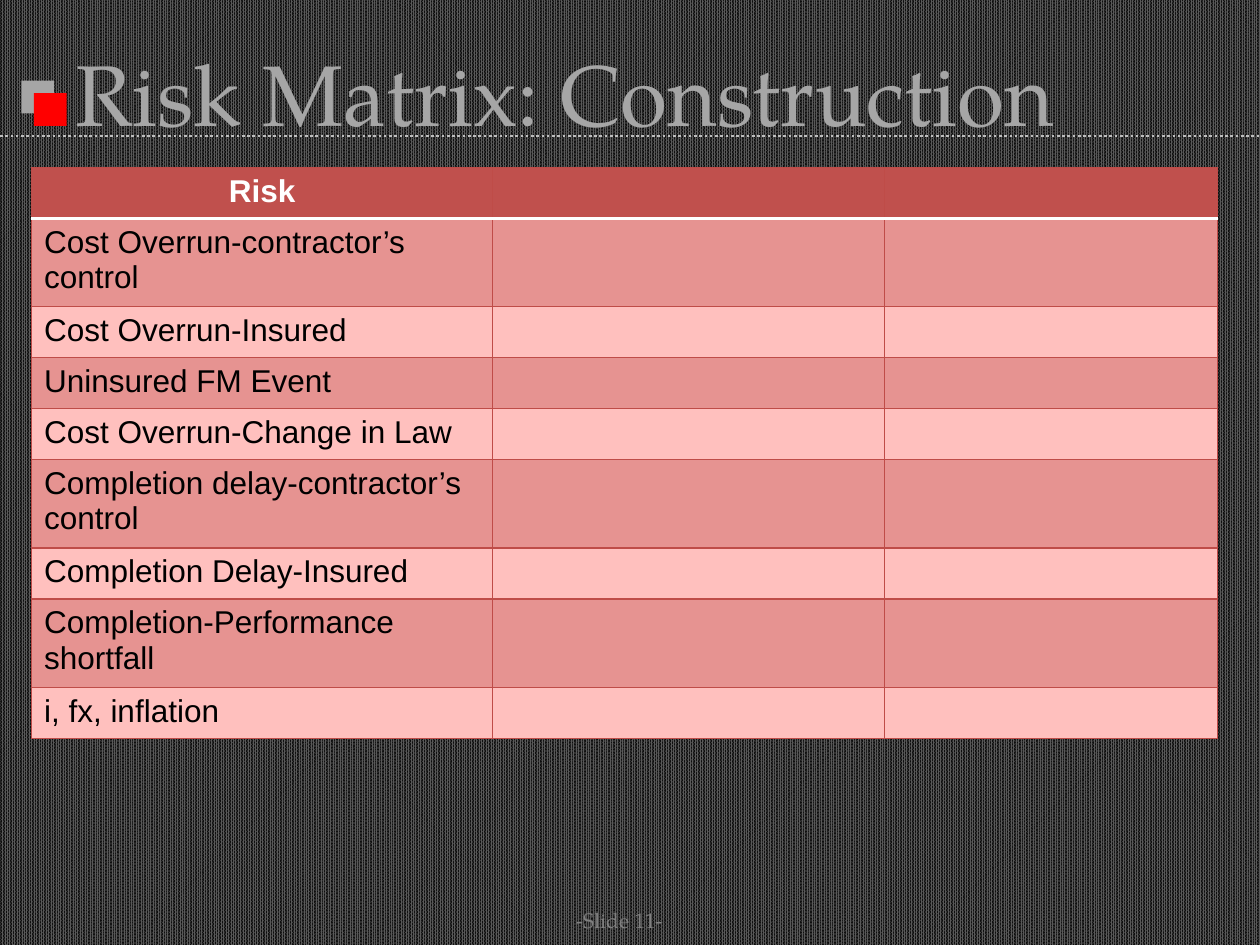
from lxml import etree
from pptx import Presentation
from pptx.dml.color import RGBColor
from pptx.enum.dml import MSO_LINE, MSO_PATTERN
from pptx.enum.shapes import MSO_CONNECTOR, MSO_SHAPE
from pptx.enum.text import MSO_ANCHOR, MSO_AUTO_SIZE, PP_ALIGN
from pptx.oxml import parse_xml
from pptx.oxml.ns import nsdecls, qn
from pptx.util import Inches, Pt

CENTER, LEFT = PP_ALIGN.CENTER, PP_ALIGN.LEFT
MIDDLE = MSO_ANCHOR.MIDDLE
NO_AUTOFIT = MSO_AUTO_SIZE.NONE
RECTANGLE = MSO_SHAPE.RECTANGLE
STRAIGHT = MSO_CONNECTOR.STRAIGHT
DOTTED = MSO_LINE.ROUND_DOT
DENSE_PATTERN = MSO_PATTERN.PERCENT_90
TITLE_ONLY = 5
GRID_COLUMNS, GRID_ROWS = 1000, 750

RISKS = [
    "Cost Overrun-contractor’s control",
    "Cost Overrun-Insured",
    "Uninsured FM Event",
    "Cost Overrun-Change in Law",
    "Completion delay-contractor’s control",
    "Completion Delay-Insured",
    "Completion-Performance shortfall",
    "i, fx, inflation",
]


def color(hex_string):
    return RGBColor.from_string(hex_string)


class SlideBuilder:
    """Holds the style and the current slide; lengths are grid units."""

    serif, sans = "TeX Gyre Pagella", "Arial"
    gray, red = "A6A6A6", "FF0000"
    header_fill, border = "C0504D", "BF4C48"
    bands = ("E69391", "FFC0BE")

    def __init__(self, presentation):
        self.column = presentation.slide_width / GRID_COLUMNS
        self.row = presentation.slide_height / GRID_ROWS
        layout = presentation.slide_layouts[TITLE_ONLY]
        self.slide = presentation.slides.add_slide(layout)
        self.shapes = self.slide.shapes

    def place(self, left, top, width, height):
        """Turn grid units into slide lengths."""
        return (round(left * self.column), round(top * self.row),
                round(width * self.column), round(height * self.row))

    def background(self, foreground, behind):
        fill = self.slide.background.fill
        fill.patterned()
        fill.pattern = DENSE_PATTERN
        fill.fore_color.rgb = color(foreground)
        fill.back_color.rgb = color(behind)

    def add_text(self, paragraph, text, size, font_name, text_color,
                 alignment=LEFT, bold=False):
        paragraph.alignment = alignment
        run = paragraph.add_run()
        run.text = text
        run.font.size = Pt(size)
        run.font.name = font_name
        run.font.bold = bold
        run.font.color.rgb = color(text_color)

    def title(self, text, *box):
        shape = self.shapes.title
        shape.left, shape.top, shape.width, shape.height = self.place(*box)
        frame = shape.text_frame
        frame.auto_size = NO_AUTOFIT
        frame.vertical_anchor = MIDDLE
        self.add_text(frame.paragraphs[0], text, 49, self.serif, self.gray)

    def footer(self, text, *box):
        frame = self.shapes.add_textbox(*self.place(*box)).text_frame
        frame.word_wrap = True
        frame.vertical_anchor = MIDDLE
        self.add_text(frame.paragraphs[0], text, 12, self.serif, "808080", CENTER)

    def square(self, fill, *box):
        shape = self.shapes.add_shape(RECTANGLE, *self.place(*box))
        shape.shadow.inherit = False
        shape.fill.solid()
        shape.fill.fore_color.rgb = color(fill)
        shape.line.fill.background()

    def dotted_rule(self, top):
        left, y, right, _ = self.place(0, top, GRID_COLUMNS, 0)
        rule = self.shapes.add_connector(STRAIGHT, left, y, right, y)
        rule.line.color.rgb = color("BFBFBF")
        rule.line.width = Pt(1.5)
        rule.line.dash_style = DOTTED
        etree.SubElement(rule._element.spPr, qn("a:effectLst"))

    def cell_border(self, cell, side, line_color, width):
        cell._tc.get_or_add_tcPr().append(parse_xml(
            f'<a:ln{side} {nsdecls("a")} w="{Pt(width)}"><a:solidFill>'
            f'<a:srgbClr val="{line_color}"/></a:solidFill></a:ln{side}>'))

    def style_cell(self, cell, row_index):
        for side in "LRTB":
            below_header = (row_index, side) in ((0, "B"), (1, "T"))
            line = ("FFFFFF", 2) if below_header else (self.border, 0.75)
            self.cell_border(cell, side, *line)
        cell.fill.solid()
        fill = self.bands[(row_index - 1) % 2] if row_index else self.header_fill
        cell.fill.fore_color.rgb = color(fill)

    def risk_table(self, header, risks, left, top, widths, row_height):
        labels = [header, *risks]
        box = self.place(left, top, sum(widths), row_height * len(labels))
        table = self.shapes.add_table(len(labels), len(widths), *box).table
        table.first_row = table.horz_banding = False
        for column, width in zip(table.columns, widths):
            column.width = round(width * self.column)
        for index, (row, label) in enumerate(zip(table.rows, labels)):
            row.height = round(row_height * self.row)
            for cell in row.cells:
                self.style_cell(cell, index)
            is_header = index == 0
            self.add_text(row.cells[0].text_frame.paragraphs[0], label, 18,
                          self.sans, "FFFFFF" if is_header else "000000",
                          CENTER if is_header else LEFT, is_header)


def main():
    presentation = Presentation()
    presentation.slide_width, presentation.slide_height = Inches(10), Inches(7.5)
    builder = SlideBuilder(presentation)
    builder.background("595959", "0D0D0D")
    builder.square(builder.gray, 17, 64, 26, 26)
    builder.square(builder.red, 27, 74, 26, 26)
    builder.dotted_rule(108)
    builder.title("Risk Matrix: Construction", 50, 30, 900, 87)
    builder.footer("-Slide 11-", 375, 710, 233, 40)
    builder.risk_table("Risk", RISKS, 25, 133, (366, 311, 264), 40.5)
    presentation.save("out.pptx")


if __name__ == "__main__":
    main()
